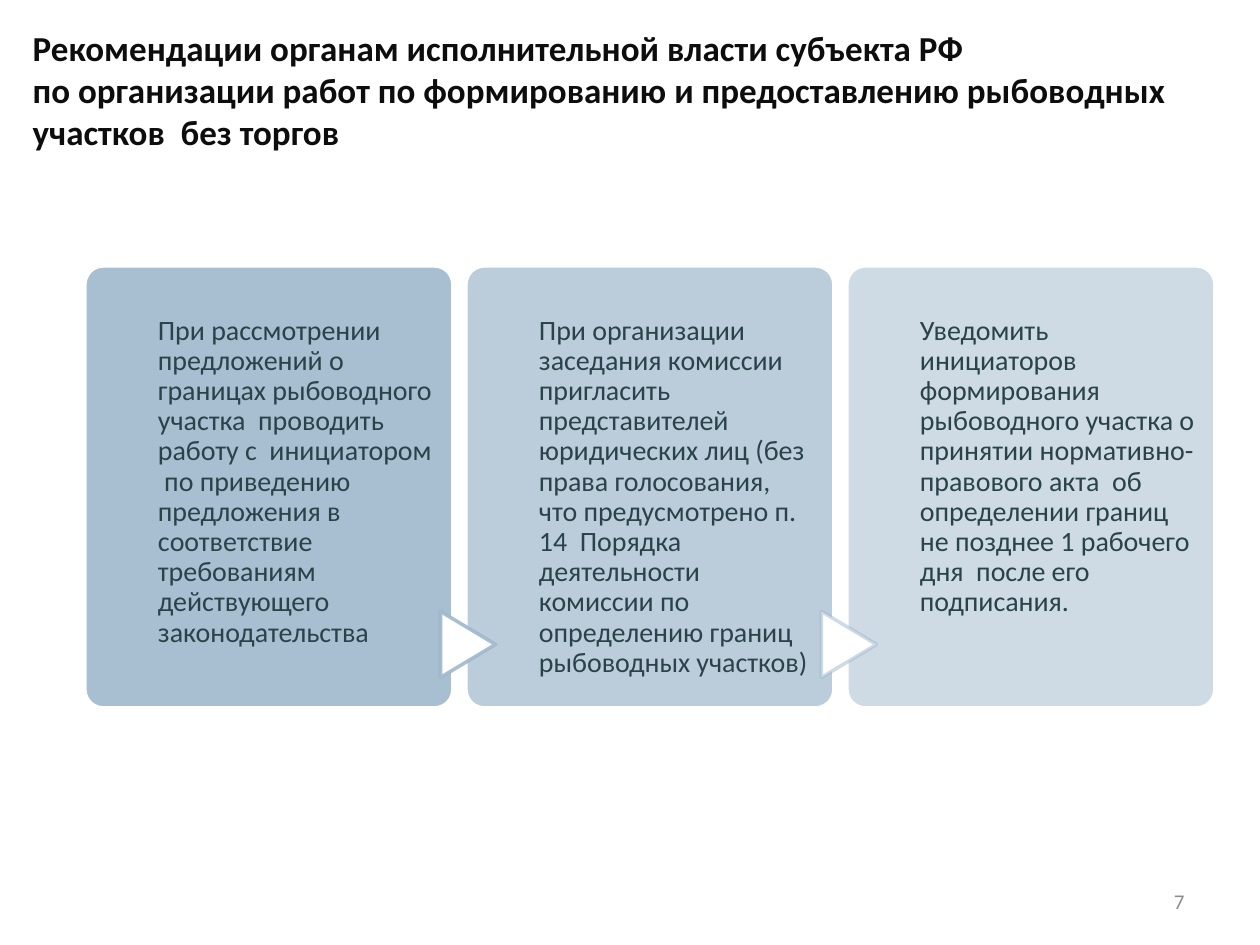
from lxml.etree import SubElement
from pptx import Presentation
from pptx.dml.color import RGBColor
from pptx.enum.shapes import MSO_SHAPE as Shape
from pptx.enum.text import MSO_ANCHOR as Anchor, MSO_AUTO_SIZE as AutoSize, PP_ALIGN as Align
from pptx.oxml.ns import qn
from pptx.util import Emu, Inches, Pt

STEPS = [
    ("При рассмотрении предложений о границах рыбоводного участка  проводить "
     "работу с  инициатором  по приведению предложения в соответствие "
     "требованиям действующего  законодательства", 90),
    ("При организации заседания комиссии пригласить представителей юридических "
     "лиц (без права голосования, что предусмотрено п. 14  Порядка деятельности "
     "комиссии по определению границ рыбоводных участков)", 70),
    ("Уведомить инициаторов формирования рыбоводного участка о принятии "
     "нормативно-правового акта  об определении границ не позднее 1 рабочего "
     "дня  после его подписания.", 50),
]
TITLE = [
    "Рекомендации органам исполнительной власти субъекта РФ",
    "по организации работ по формированию и предоставлению рыбоводных участков  без торгов",
]


def px(*lengths):
    return [Emu(round(length * 914400 / 126)) for length in lengths]


def color(value):
    return RGBColor.from_string(value)


class StepsSlide:
    """Draws the elements of a process slide in one style."""

    font, accent, white = "Calibri", "9FB8CD", "FFFFFF"
    ink, heading, muted = "294349", "0D0D0D", "8C8C8C"

    def __init__(self, slide):
        self.slide = slide

    def set_text(self, frame, lines, size, ink, bold=False, align=Align.LEFT):
        frame.word_wrap = True
        frame.text = "\n".join(lines)
        for paragraph in frame.paragraphs:
            paragraph.alignment = align
            font = paragraph.font
            font.name, font.size, font.bold = self.font, Pt(size), bold
            font.color.rgb = color(ink)

    def title(self, lines, *box):
        shape = self.slide.shapes.title
        shape.left, shape.top, shape.width, shape.height = px(*box)
        frame = shape.text_frame
        frame.auto_size, frame.vertical_anchor = AutoSize.NONE, Anchor.TOP
        self.set_text(frame, lines, 20, self.heading, bold=True)

    def page_number(self, number, *box):
        frame = self.slide.shapes.add_textbox(*px(*box)).text_frame
        frame.vertical_anchor = Anchor.MIDDLE
        self.set_text(frame, [number], 12, self.muted, align=Align.RIGHT)

    def step_text(self, text, *box):
        frame = self.slide.shapes.add_textbox(*px(*box)).text_frame
        frame.margin_left = frame.margin_right = frame.margin_bottom = 0
        frame.margin_top = px(50)[0]
        self.set_text(frame, [text], 16, self.ink)
        frame.paragraphs[0].line_spacing = 0.9

    def outlined(self, kind, box, fill, line):
        shape = self.slide.shapes.add_shape(kind, *px(*box))
        shape.shadow.inherit = False
        shape.fill.solid()
        shape.fill.fore_color.rgb = color(fill)
        shape.line.color.rgb = color(line)
        shape.line.width = Pt(2)
        return shape

    def fade(self, parent, opacity):
        tint = parent.find(qn("a:solidFill")).find(qn("a:srgbClr"))
        SubElement(tint, qn("a:alpha")).set("val", str(opacity * 1000))

    def card(self, opacity, *box):
        shape = self.outlined(Shape.ROUNDED_RECTANGLE, box, self.accent, self.white)
        shape.adjustments[0] = 0.05
        self.fade(shape.element.spPr, opacity)

    def arrow(self, opacity, *box):
        shape = self.outlined(Shape.FLOWCHART_EXTRACT, box, self.white, self.accent)
        shape.rotation = 90
        self.fade(shape.element.spPr.find(qn("a:ln")), opacity)


def main():
    presentation = Presentation()
    presentation.slide_width, presentation.slide_height = Inches(10), Inches(7.5)
    layout = presentation.slide_layouts[5]
    steps = StepsSlide(presentation.slides.add_slide(layout))
    steps.page_number("7", 903, 876, 294, 50)
    steps.title(TITLE, 20, 20, 1240, 140)

    top, width, height, pitch = 266, 368, 442, 381
    # Arrow opacity steps down from the first gap to the second.
    for index, (text, opacity) in enumerate(STEPS):
        left = 85 + index * pitch
        steps.card(opacity, left, top, width, height)
        if index:
            steps.arrow(130 - 40 * (index - 1) - 40 if index == 1 else opacity,
                        left - 31, 617, 66, 55)
        steps.step_text(text, left + 73, top, 275, height)

    presentation.save("out.pptx")


if __name__ == "__main__":
    main()
